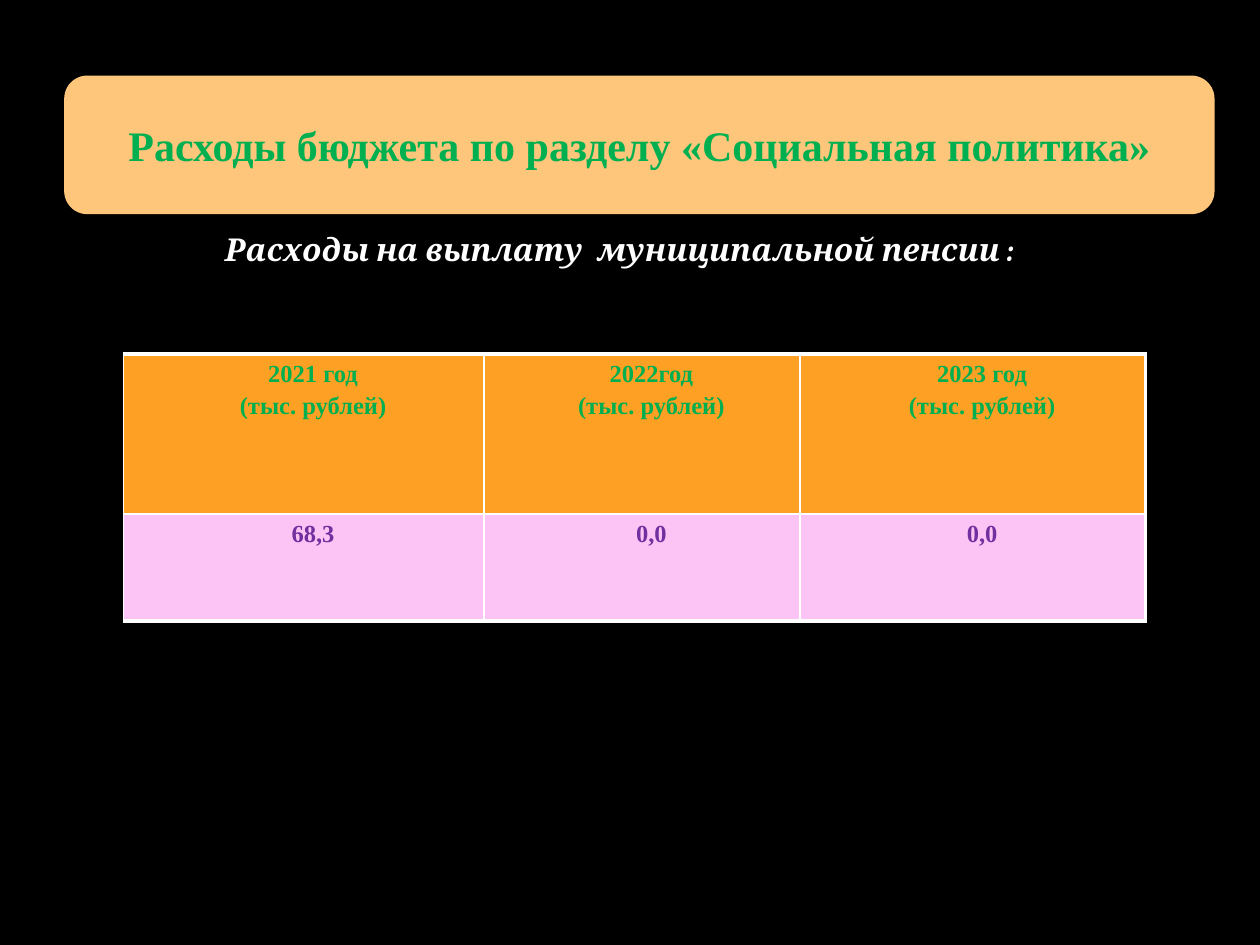
"""Build a slide on social policy spending with a title, a subtitle and a table."""
import pptx
import pptx.dml.color
import pptx.enum.shapes
import pptx.enum.text
import pptx.oxml.ns
import pptx.util
from lxml import etree

Inches = pptx.util.Inches
Pt = pptx.util.Pt
COLORS = {
    "black": "000000",
    "white": "FFFFFF",
    "banner": "FEC67B",
    "green": "00B050",
    "header": "FDA023",
    "body": "FCC4F4",
    "purple": "7030A0",
}
SERIF = "Times New Roman"
UNIT = "(тыс. рублей)"
ROWS = [
    [["2021 год", UNIT], ["2022год", UNIT], ["2023 год", UNIT]],
    [["68,3"], ["0,0"], ["0,0"]],
]
ROW_COLORS = [("header", "green"), ("body", "purple")]
COL_WIDTHS = [2.86, 2.51, 2.74]
ROW_HEIGHTS = [1.27, 0.85]
THIN, THICK = 1, 2.25


def rgb(name):
    return pptx.dml.color.RGBColor.from_string(COLORS[name])


def set_fill(obj, color):
    obj.fill.solid()
    obj.fill.fore_color.rgb = rgb(color)


def add_run(p, text, size, color, font=SERIF, italic=None):
    p.alignment = pptx.enum.text.PP_ALIGN.CENTER
    r = p.add_run()
    r.text = text
    r.font.size = Pt(size)
    r.font.name = font
    r.font.bold = True
    r.font.italic = italic
    r.font.color.rgb = rgb(color)


def sub(parent, tag, **attrs):
    return etree.SubElement(parent, pptx.oxml.ns.qn(tag), attrs)


def add_banner(s, text):
    sp = s.shapes.add_shape(
        pptx.enum.shapes.MSO_SHAPE.ROUNDED_RECTANGLE,
        Inches(0.51), Inches(0.6), Inches(9.13), Inches(1.1))
    sp.shadow.inherit = False
    set_fill(sp, "banner")
    sp.line.fill.background()
    tf = sp.text_frame
    tf.word_wrap = True
    tf.vertical_anchor = pptx.enum.text.MSO_ANCHOR.MIDDLE
    add_run(tf.paragraphs[0], text, 24, "green")


def add_subtitle(s, text):
    sp = s.shapes.add_textbox(Inches(0.27), Inches(1.78), Inches(9.29), Inches(0.34))
    tf = sp.text_frame
    tf.word_wrap = True
    add_run(tf.paragraphs[0], text, 18, "white", "Cambria", True)


def set_borders(cell, **widths):
    tcPr = cell._tc.get_or_add_tcPr()
    for side in "LRTB":
        ln = sub(tcPr, f"a:ln{side}", w=str(Pt(widths[side])))
        sub(sub(ln, "a:solidFill"), "a:srgbClr", val=COLORS["white"])


def fill_cell(cell, lines, color):
    tf = cell.text_frame
    for i, text in enumerate(lines):
        p = tf.add_paragraph() if i else tf.paragraphs[0]
        pPr = p._p.get_or_add_pPr()
        pPr.set("marL", str(Inches(0.15)))
        pPr.set("indent", "0")
        sub(sub(pPr, "a:spcBef"), "a:spcPct", val="20000")
        add_run(p, text, 14, color)


def add_spending_table(s):
    n_rows, n_cols = len(ROWS), len(COL_WIDTHS)
    table = s.shapes.add_table(
        n_rows, n_cols, Inches(0.98), Inches(2.81),
        Inches(sum(COL_WIDTHS)), Inches(sum(ROW_HEIGHTS))).table
    table.horz_banding = False
    table.first_row = False
    for col, width in zip(table.columns, COL_WIDTHS):
        col.width = Inches(width)
    for i, (row, height) in enumerate(zip(table.rows, ROW_HEIGHTS)):
        row.height = Inches(height)
        fill, color = ROW_COLORS[i]
        for j, cell in enumerate(row.cells):
            set_borders(
                cell, L=THIN,
                R=THICK if j == n_cols - 1 else THIN,
                T=THICK if i == 0 else THIN,
                B=THICK if i == n_rows - 1 else THIN)
            set_fill(cell, fill)
            fill_cell(cell, ROWS[i][j], color)


def main():
    prs = pptx.Presentation()
    prs.slide_width = Inches(10)
    prs.slide_height = Inches(7.5)
    s = prs.slides.add_slide(prs.slide_layouts[6])
    set_fill(s.background, "black")
    add_banner(s, "Расходы бюджета по разделу «Социальная политика»")
    add_subtitle(s, "Расходы на выплату  муниципальной пенсии :")
    add_spending_table(s)
    prs.save("out.pptx")


if __name__ == "__main__":
    main()
